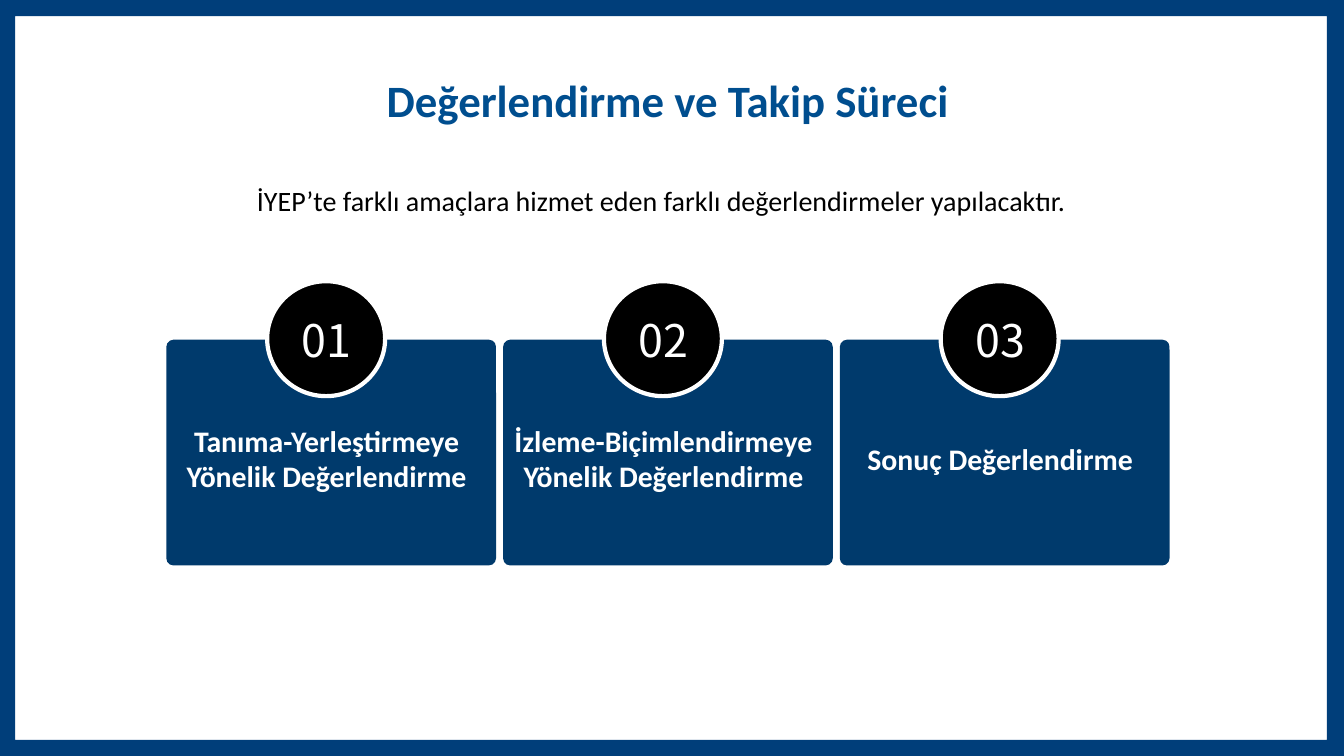
from dataclasses import dataclass

from pptx import Presentation
from pptx.dml.color import RGBColor as Rgb
from pptx.enum.shapes import MSO_SHAPE as Shape
from pptx.enum.text import MSO_ANCHOR as Anchor, PP_ALIGN as Align
from pptx.util import Inches, Pt

WIDE, HIGH = 13.33, 7.5


@dataclass(frozen=True)
class Theme:
    white: str = "FFFFFF"
    black: str = "000000"
    title: str = "004E8F"
    card: str = "003A6C"
    frame: str = "003E7A"
    font: str = "Calibri"
    digits: str = "Noto Sans CJK SC"
    big: float = 32
    label: float = 21.3
    body: float = 20


class Deck:
    def __init__(self, theme):
        self.theme = theme
        self.file = Presentation()
        self.file.slide_width = Inches(WIDE)
        self.file.slide_height = Inches(HIGH)
        self.slide = self.file.slides.add_slide(self.file.slide_layouts[6])

    def paint(self, shape, fill, line=None):
        shape.shadow.inherit = False
        shape.fill.solid()
        shape.fill.fore_color.rgb = Rgb.from_string(fill)
        if line:
            shape.line.color.rgb = Rgb.from_string(line)
            shape.line.width = Pt(3)
        else:
            shape.line.fill.background()

    def shape(self, kind, box, fill, line=None):
        item = self.slide.shapes.add_shape(kind, *map(Inches, box))
        self.paint(item, fill, line)
        return item

    def text(self, words, box, size, color, bold=False, font=None,
             align=Align.CENTER, anchor=Anchor.TOP, wrap=True):
        frame = self.slide.shapes.add_textbox(*map(Inches, box)).text_frame
        frame.word_wrap = wrap
        frame.vertical_anchor = anchor
        line = frame.paragraphs[0]
        line.text = words
        line.alignment = align
        line.font.name = font or self.theme.font
        line.font.size = Pt(size)
        line.font.bold = bold
        line.font.color.rgb = Rgb.from_string(color)

    def border(self, left, top, right, bottom):
        """Fill the area between the slide edge and an inner rectangle."""
        def pts(*pairs):
            return [(Inches(x), Inches(y)) for x, y in pairs]

        path = self.slide.shapes.build_freeform(0, 0)
        path.add_line_segments(pts((WIDE, 0), (WIDE, HIGH), (0, HIGH)))
        path.move_to(Inches(left), Inches(top))
        path.add_line_segments(
            pts((left, bottom), (right, bottom), (right, top)))
        self.paint(path.convert_to_shape(), self.theme.frame)

    def card(self, left, number, words, top):
        look = self.theme
        # Panel and label
        panel = self.shape(Shape.ROUNDED_RECTANGLE,
                           (left, 3.37, 3.27, 2.24), look.card)
        panel.adjustments[0] = 0.032
        self.text(words, (left, top, 3.18, 0.82), look.label, look.white,
                  bold=True)
        # Numbered badge
        self.shape(Shape.OVAL, (left + 1, 2.79, 1.17, 1.14),
                   look.black, look.white)
        self.text(f"{number:02}", (left + 1.22, 3.05, 0.74, 0.64), look.big,
                  look.white, font=look.digits, anchor=Anchor.MIDDLE,
                  wrap=False)


def main():
    look = Theme()
    deck = Deck(look)

    # Frame
    deck.border(0.15, 0.16, 13.16, 7.34)

    # Heading and lead sentence
    deck.text("Değerlendirme ve Takip Süreci", (1.43, 0.67, 10.39, 0.64),
              look.big, look.title, bold=True)
    deck.text("İYEP’te farklı amaçlara hizmet eden farklı değerlendirmeler "
              "yapılacaktır.", (2.45, 1.77, 8.53, 0.44),
              look.body, look.black, align=Align.LEFT)

    # Three kinds of assessment
    cards = [("Tanıma-Yerleştirmeye Yönelik Değerlendirme", 4.14),
             ("İzleme-Biçimlendirmeye Yönelik Değerlendirme", 4.14),
             ("Sonuç Değerlendirme", 4.32)]
    for step, (words, top) in enumerate(cards):
        deck.card(1.65 + 3.34 * step, step + 1, words, top)

    deck.file.save("out.pptx")


if __name__ == "__main__":
    main()
